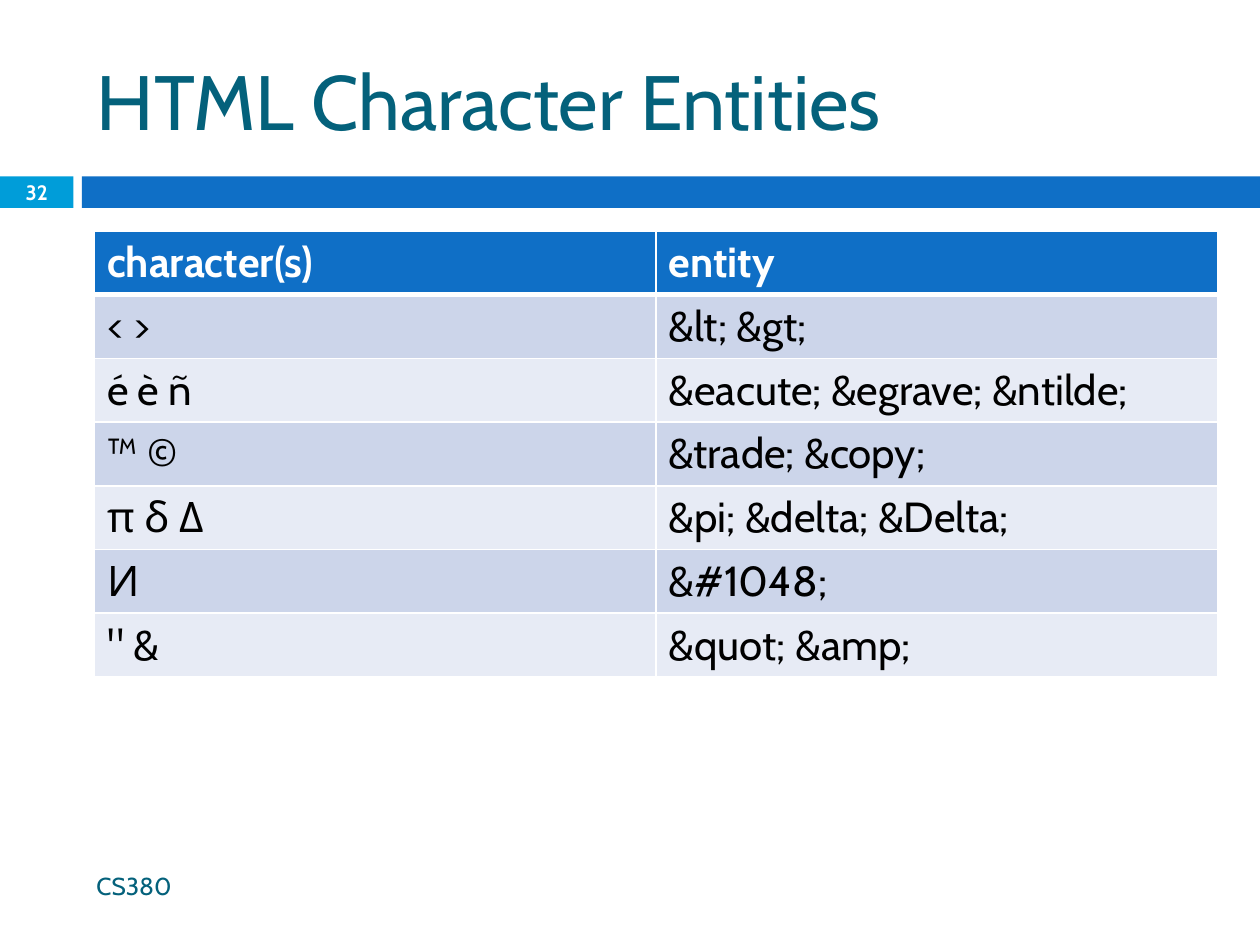
from dataclasses import dataclass

from lxml import etree
from pptx import Presentation, util as u
from pptx.dml.color import RGBColor
from pptx.enum import shapes, text
from pptx.oxml import ns


@dataclass(frozen=True)
class Theme:
    font: str = "Cabin"
    title: str = "04617B"
    blue: str = "0F6FC6"
    cyan: str = "009DD9"
    white: str = "FFFFFF"
    black: str = "000000"
    bands: tuple = ("CCD5EA", "E7EBF5")
    big: float = 44
    body: float = 24
    note: float = 14
    small: float = 11.9


COLS, ROWS = 120, 90  # slide grid, twelve units to the inch

CELLS = [
    ("character(s)", "entity"),
    ("< >", "&lt; &gt;"),
    ("é è ñ", "&eacute; &egrave; &ntilde;"),
    ("™ ©", "&trade; &copy;"),
    ("π δ Δ", "&pi; &delta; &Delta;"),
    ("И", "&#1048;"),
    ('" &', "&quot; &amp;"),
]


def write(frame, words, font, size, color, bold=False, align=text.PP_ALIGN.LEFT):
    """Put one formatted paragraph in a text frame."""
    para = frame.paragraphs[0]
    para.alignment = align
    run = para.add_run()
    run.text = words
    run.font.name, run.font.size, run.font.bold = font, u.Pt(size), bold
    run.font.color.rgb = RGBColor.from_string(color)


def paint(fill, color):
    fill.solid()
    fill.fore_color.rgb = RGBColor.from_string(color)


def edge(cell, color, **sides):
    """Draw cell borders; each side is given a width in points."""
    props = cell._tc.get_or_add_tcPr()
    for spot, (side, width) in enumerate(sides.items()):
        line = etree.Element(ns.qn(f"a:ln{side}"), w=str(u.Pt(width)))
        fill = etree.SubElement(line, ns.qn("a:solidFill"))
        etree.SubElement(fill, ns.qn("a:srgbClr"), val=color)
        props.insert(spot, line)


class Deck:
    def __init__(self, theme):
        self.theme = theme
        self.prs = Presentation()
        self.prs.slide_width, self.prs.slide_height = u.Inches(10), u.Inches(7.5)
        self.slide = self.prs.slides.add_slide(self.prs.slide_layouts[5])

    def box(self, x, y, w, h):
        """Turn grid units into slide lengths."""
        col, row = self.prs.slide_width / COLS, self.prs.slide_height / ROWS
        return round(x * col), round(y * row), round(w * col), round(h * row)

    def title(self, words, *area):
        shape = self.slide.shapes.title
        shape.left, shape.top, shape.width, shape.height = self.box(*area)
        frame = shape.text_frame
        frame.vertical_anchor = text.MSO_ANCHOR.MIDDLE
        frame.auto_size = text.MSO_AUTO_SIZE.NONE
        write(frame, words, self.theme.font, self.theme.big, self.theme.title)

    def bar(self, color, *area):
        shape = self.slide.shapes.add_shape(
            shapes.MSO_SHAPE.RECTANGLE, *self.box(*area))
        shape.shadow.inherit = False
        paint(shape.fill, color)
        shape.line.fill.background()

    def label(self, words, *area, **style):
        frame = self.slide.shapes.add_textbox(*self.box(*area)).text_frame
        frame.word_wrap = True
        frame.vertical_anchor = text.MSO_ANCHOR.MIDDLE
        write(frame, words, self.theme.font, **style)

    def table(self, rows, *area):
        look = self.theme
        grid = self.slide.shapes.add_table(
            len(rows), len(rows[0]), *self.box(*area)).table
        for r, row in enumerate(rows):
            head = r == 0
            for c, words in enumerate(row):
                cell = grid.cell(r, c)
                cell.vertical_anchor = text.MSO_ANCHOR.MIDDLE
                paint(cell.fill, look.blue if head else look.bands[(r - 1) % 2])
                edge(cell, look.white, L=1, R=1,
                     T=3 if r == 1 else 1, B=3 if head else 1)
                write(cell.text_frame, words, look.font, look.body,
                      look.white if head else look.black, bold=head)


def main():
    look = Theme()
    deck = Deck(look)

    # Heading and divider
    deck.bar(look.cyan, 0, 16.8, 7, 3)
    deck.bar(look.blue, 7.8, 16.8, COLS - 7.8, 3)
    deck.title("HTML Character Entities", 8, 3, 107, 13)

    # Entity table
    deck.table(CELLS, 9, 22, 107, 42)

    # Footer and slide number
    deck.label("CS380", 8, 82, 71.2, 4.8, size=look.note, color=look.title)
    deck.label("32", 0, 16.7, 7, 3.2, size=look.small, color=look.white,
               bold=True, align=text.PP_ALIGN.CENTER)

    deck.prs.save("out.pptx")


if __name__ == "__main__":
    main()
